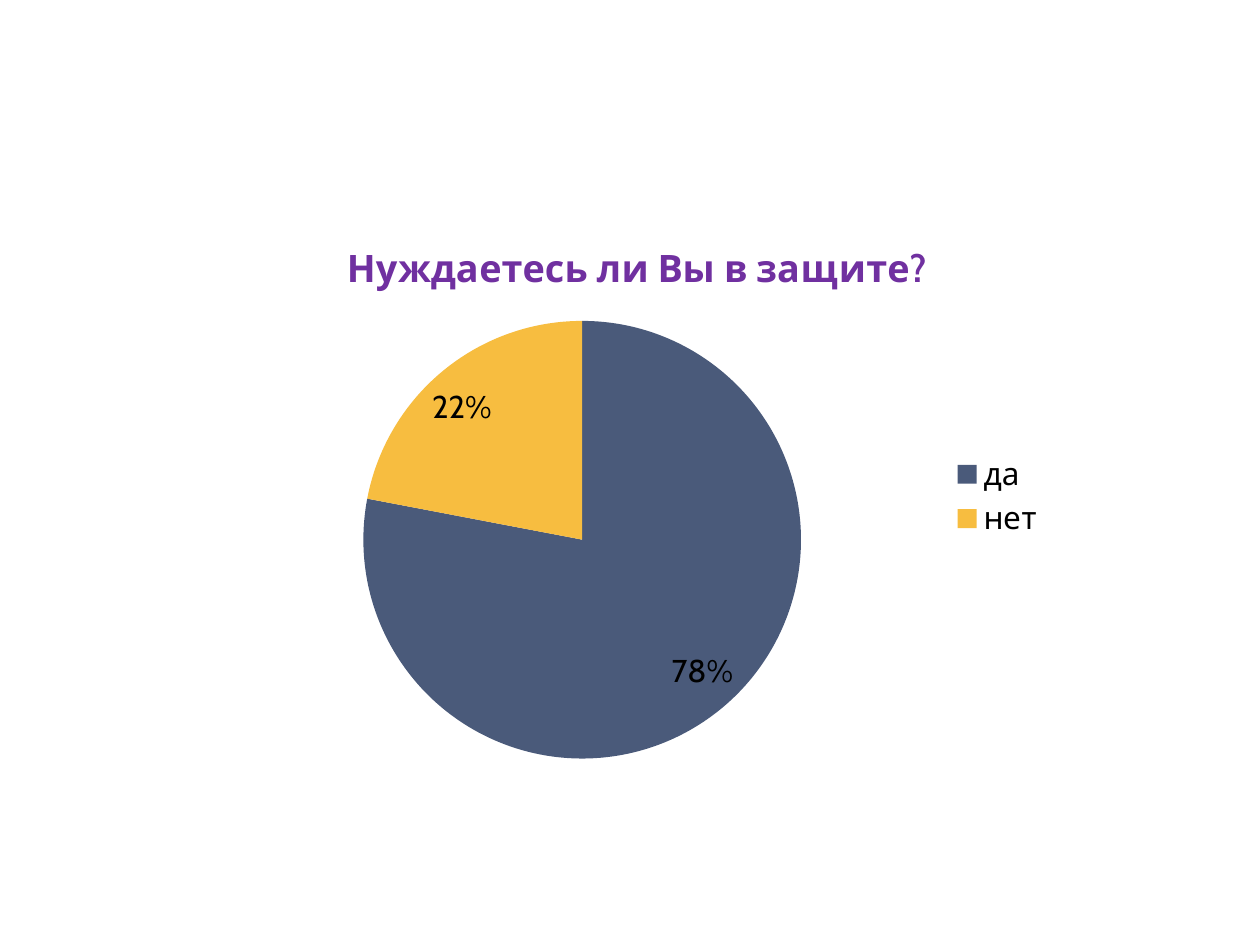
from dataclasses import dataclass

from pptx import Presentation
from pptx.chart.chart import Chart
from pptx.chart.data import CategoryChartData
from pptx.dml.color import RGBColor
from pptx.enum.chart import XL_CHART_TYPE, XL_LABEL_POSITION, XL_LEGEND_POSITION
from pptx.util import Emu, Pt

PX = 914400 // 126
FONT = "Cabin"
QUESTION = "Нуждаетесь ли Вы в защите?"
COLORS = {"title": "7030A0", "text": "000000", "yes": "4A5A7A", "no": "F7BD40"}


@dataclass
class Answer:
    label: str
    share: float
    color: str


ANSWERS = [Answer("да", 0.78, "yes"), Answer("нет", 0.22, "no")]


def px(n: int) -> Emu:
    return Emu(n * PX)


def rgb(name: str) -> RGBColor:
    return RGBColor.from_string(COLORS[name])


def style_font(font, size: float, color: str, bold: bool = False) -> None:
    font.name = FONT
    font.size = Pt(size)
    font.bold = bold
    font.color.rgb = rgb(color)


def add_title(chart: Chart, text: str) -> None:
    chart.has_title = True
    chart.chart_title.include_in_layout = False
    r = chart.chart_title.text_frame.paragraphs[0].add_run()
    r.text = text
    style_font(r.font, 21.6, "title", bold=True)


def add_pie(slide, answers: list[Answer]) -> None:
    data = CategoryChartData(number_format="0%")
    data.categories = [a.label for a in answers]
    data.add_series(QUESTION, [a.share for a in answers])
    chart = slide.shapes.add_chart(
        XL_CHART_TYPE.PIE, px(217), px(217), px(840), px(559), data
    ).chart
    style_font(chart.font, 18, "text")
    add_title(chart, QUESTION)

    chart.has_legend = True
    chart.legend.position = XL_LEGEND_POSITION.RIGHT
    chart.legend.include_in_layout = False

    plot = chart.plots[0]
    plot.vary_by_categories = True
    for i, answer in enumerate(answers):
        fill = plot.series[0].points[i].format.fill
        fill.solid()
        fill.fore_color.rgb = rgb(answer.color)

    labels = plot.series[0].data_labels
    labels.show_value = True
    labels.number_format = "0%"
    labels.number_format_is_linked = False
    labels.position = XL_LABEL_POSITION.BEST_FIT
    style_font(labels.font, 18, "text")


def main() -> None:
    prs = Presentation()
    prs.slide_width, prs.slide_height = px(1260), px(945)
    slide = prs.slides.add_slide(prs.slide_layouts[6])
    add_pie(slide, ANSWERS)
    prs.save("out.pptx")


if __name__ == "__main__":
    main()
